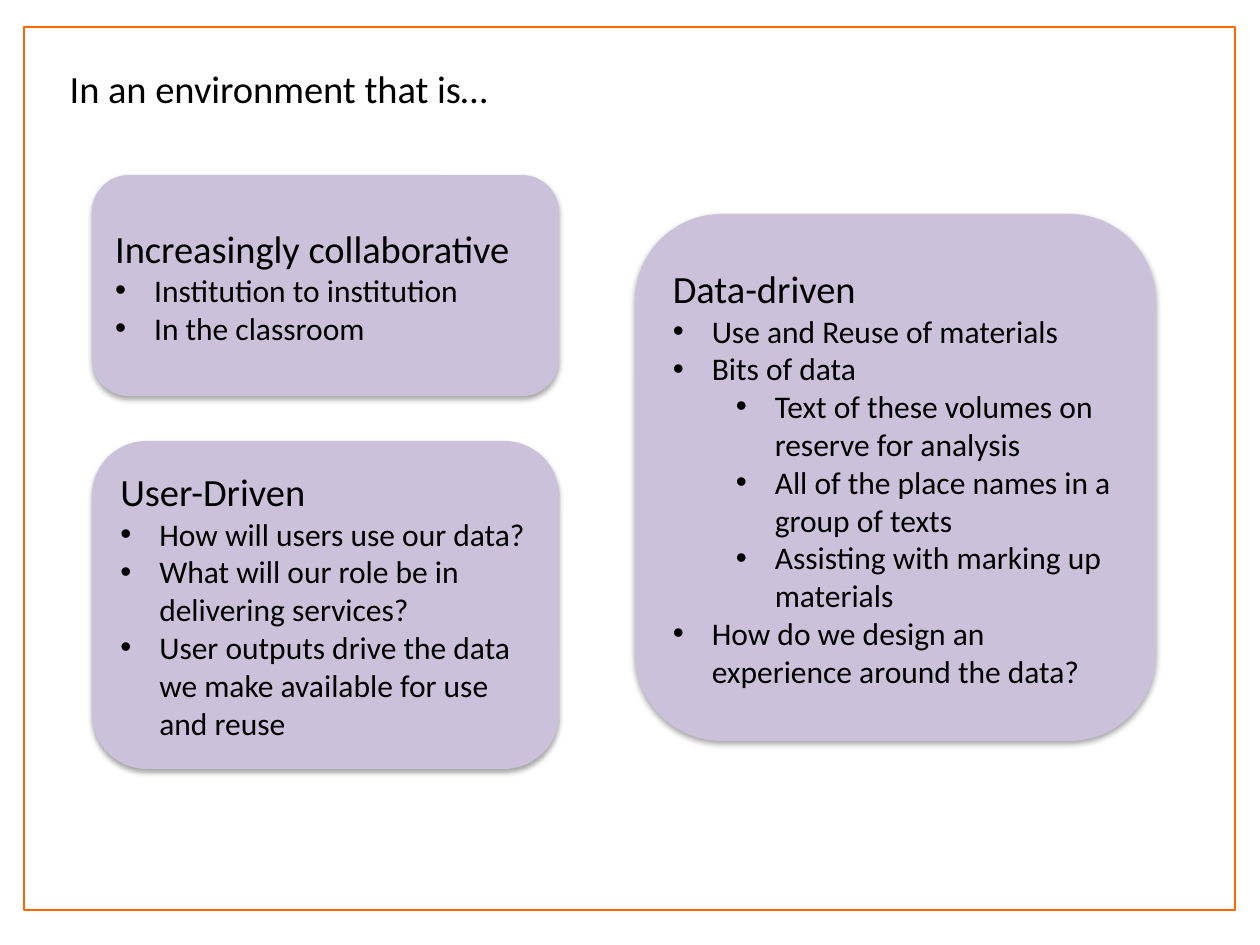
"""Build a slide on the traits of a collaborative, user-driven and data-driven environment."""
from dataclasses import dataclass

from lxml.etree import SubElement
from pptx import Presentation
from pptx.dml.color import RGBColor
from pptx.enum.shapes import MSO_SHAPE
from pptx.enum.text import MSO_ANCHOR, MSO_AUTO_SIZE, PP_ALIGN
from pptx.oxml.ns import qn
from pptx.util import Emu, Pt


@dataclass(frozen=True)
class Theme:
    font: str = "Calibri"
    ink: RGBColor = RGBColor(0x00, 0x00, 0x00)
    paper: RGBColor = RGBColor(0xFF, 0xFF, 0xFF)
    border: RGBColor = RGBColor(0xFF, 0x66, 0x00)
    card: RGBColor = RGBColor(0xCC, 0xC1, 0xDA)
    heading: Pt = Pt(22)
    body: Pt = Pt(18)


THEME = Theme()
HANG = 39
LEVEL_STEP = 63


def px(length):
    return Emu(round(length * 914400 / 126))


def add_run(paragraph, text, size):
    paragraph.alignment = PP_ALIGN.LEFT
    run = paragraph.add_run()
    run.text = text
    run.font.name = THEME.font
    run.font.size = size
    run.font.color.rgb = THEME.ink


traits = [
    ((92, 175, 467, 221), "Increasingly collaborative", [
        (0, "Institution to institution"),
        (0, "In the classroom"),
    ]),
    ((635, 214, 521, 527), "Data-driven", [
        (0, "Use and Reuse of materials"),
        (0, "Bits of data"),
        (1, "Text of these volumes on reserve for analysis"),
        (1, "All of the place names in a group of texts"),
        (1, "Assisting with marking up materials"),
        (0, "How do we design an experience around the data?"),
    ]),
    ((92, 441, 467, 328), "User-Driven", [
        (0, "How will users use our data?"),
        (0, "What will our role be in delivering services?"),
        (0, "User outputs drive the data we make available for use and reuse"),
    ]),
]

presentation = Presentation()
presentation.slide_width, presentation.slide_height = px(1260), px(945)
slide = presentation.slides.add_slide(presentation.slide_layouts[5])

title = slide.shapes.title
title.left, title.top, title.width, title.height = map(px, (57, 59, 491, 59))
title.text_frame.auto_size = MSO_AUTO_SIZE.NONE
title.text_frame.vertical_anchor = MSO_ANCHOR.TOP
add_run(title.text_frame.paragraphs[0], "In an environment that is…", THEME.heading)

border = slide.shapes.add_shape(MSO_SHAPE.RECTANGLE, *map(px, (24, 27, 1211, 883)))
border.shadow.inherit = False
border.fill.solid()
border.fill.fore_color.rgb = THEME.paper
border.line.color.rgb = THEME.border
border.line.width = Pt(1)
title._element.addprevious(border._element)

for bounds, heading, points in traits:
    card = slide.shapes.add_shape(MSO_SHAPE.ROUNDED_RECTANGLE, *map(px, bounds))
    card.fill.solid()
    card.fill.fore_color.rgb = THEME.card
    card.line.fill.background()
    card.shadow.inherit = False
    effects = card._element.spPr.find(qn("a:effectLst"))
    shadow = SubElement(effects, qn("a:outerShdw"), blurRad=str(Pt(3.1)),
                        dist=str(Pt(1.8)), dir="5400000", rotWithShape="0")
    shade = SubElement(shadow, qn("a:srgbClr"), val=str(THEME.ink))
    SubElement(shade, qn("a:alpha"), val="35000")

    content = card.text_frame
    content.word_wrap = True
    content.vertical_anchor = MSO_ANCHOR.MIDDLE
    add_run(content.paragraphs[0], heading, THEME.heading)
    for level, point in points:
        paragraph = content.add_paragraph()
        paragraph.level = level
        properties = paragraph._p.get_or_add_pPr()
        properties.set("marL", str(px(HANG + level * LEVEL_STEP)))
        properties.set("indent", str(px(-HANG)))
        SubElement(properties, qn("a:buFont"), typeface="Arial")
        SubElement(properties, qn("a:buChar"), char="•")
        add_run(paragraph, point, THEME.body)

presentation.save("out.pptx")
